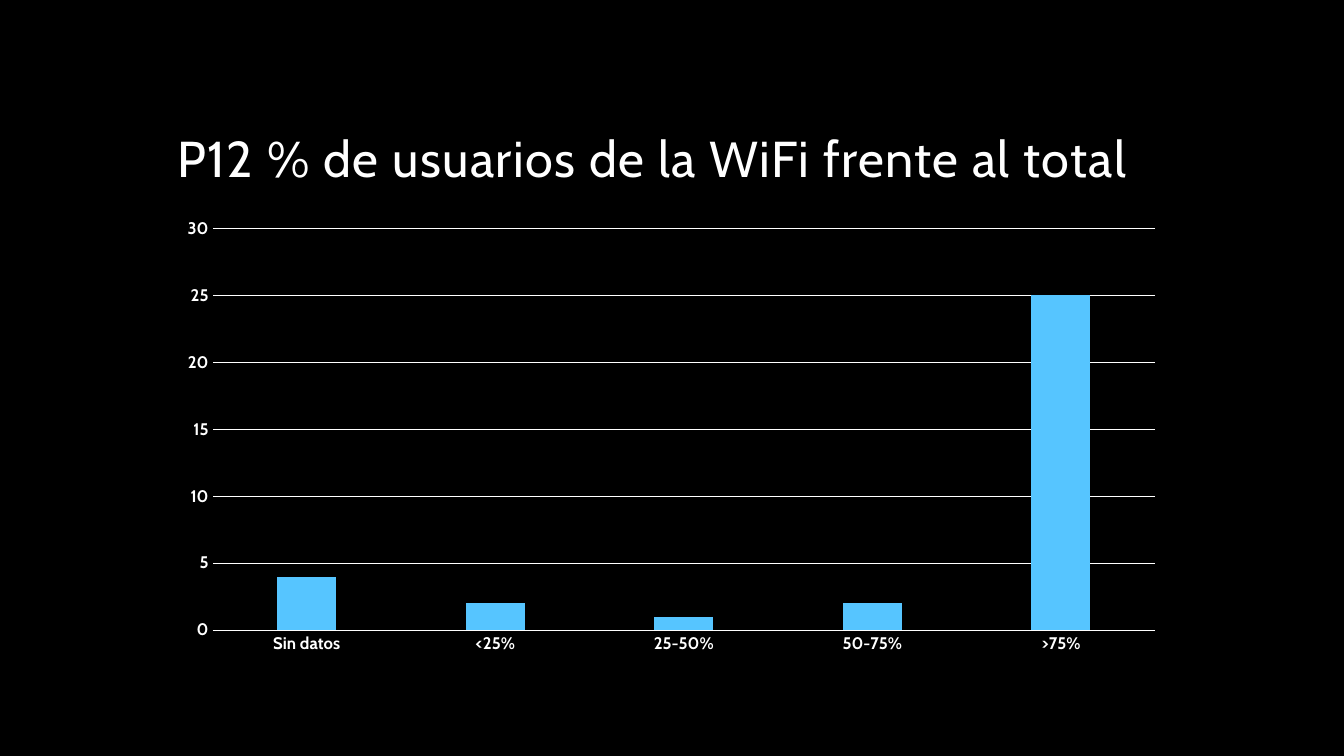
from dataclasses import dataclass

from pptx import Presentation
from pptx.chart.data import CategoryChartData
from pptx.dml.color import RGBColor
from pptx.enum.chart import XL_CHART_TYPE as ChartType, XL_TICK_MARK as Tick
from pptx.enum.text import MSO_ANCHOR as Anchor
from pptx.util import Cm, Pt

TITLE = "P12 % de usuarios de la WiFi frente al total"
USERS = {"Sin datos": 4, "<25%": 2, "25-50%": 1, "50-75%": 2, ">75%": 25}
AXIS_MAX, AXIS_STEP = 30, 5

SLIDE_W, SLIDE_H = 33.87, 19.05
LEFT, WIDTH = 4.22, 25.4
TITLE_TOP, TITLE_H = 1.07, 3.81
CHART_TOP, CHART_H = 5.28, 11.43


@dataclass(frozen=True)
class Theme:
    font: str = "Cabin"
    back: RGBColor = RGBColor(0, 0, 0)
    ink: RGBColor = RGBColor(255, 255, 255)
    bar: RGBColor = RGBColor(0x56, 0xC5, 0xFF)
    title: Pt = Pt(36)
    chart: Pt = Pt(10)
    axis: Pt = Pt(12)
    rule: Pt = Pt(0.75)


THEME = Theme()


def set_font(font, size, bold=False):
    font.name, font.size, font.bold = THEME.font, size, bold
    font.color.rgb = THEME.ink


def set_rule(line):
    line.color.rgb = THEME.ink
    line.width = THEME.rule


def add_title(s):
    box = s.shapes.add_textbox(Cm(LEFT), Cm(TITLE_TOP), Cm(WIDTH), Cm(TITLE_H))
    tf = box.text_frame
    tf.word_wrap = True
    tf.vertical_anchor = Anchor.BOTTOM
    p = tf.paragraphs[0]
    p.line_spacing = 0.9
    r = p.add_run()
    r.text = TITLE
    set_font(r.font, THEME.title)
    r._r.get_or_add_rPr().set("spc", "100")  # 1 pt between letters


def add_users_chart(s):
    data = CategoryChartData(number_format="0")
    data.categories = list(USERS)
    data.add_series("Series 1", list(USERS.values()))
    chart = s.shapes.add_chart(ChartType.COLUMN_CLUSTERED, Cm(LEFT), Cm(CHART_TOP),
                               Cm(WIDTH), Cm(CHART_H), data).chart
    chart.has_legend = False
    chart.has_title = False
    set_font(chart.font, THEME.chart)

    plot = chart.plots[0]
    plot.vary_by_categories = False
    plot.gap_width, plot.overlap = 219, -27
    fill = plot.series[0].format.fill
    fill.solid()
    fill.fore_color.rgb = THEME.bar

    cats, vals = chart.category_axis, chart.value_axis
    for axis in (cats, vals):
        axis.major_tick_mark = axis.minor_tick_mark = Tick.NONE
        set_font(axis.tick_labels.font, THEME.axis, bold=True)
    set_rule(cats.format.line)
    vals.format.line.fill.background()
    vals.has_major_gridlines = True
    set_rule(vals.major_gridlines.format.line)
    vals.minimum_scale, vals.maximum_scale = 0, AXIS_MAX
    vals.major_unit = AXIS_STEP
    vals.tick_labels.number_format = "0"
    vals.tick_labels.number_format_is_linked = False


def main():
    prs = Presentation()
    prs.slide_width, prs.slide_height = Cm(SLIDE_W), Cm(SLIDE_H)
    s = prs.slides.add_slide(prs.slide_layouts[6])
    s.background.fill.solid()
    s.background.fill.fore_color.rgb = THEME.back
    add_title(s)
    add_users_chart(s)
    prs.save("out.pptx")


if __name__ == "__main__":
    main()
